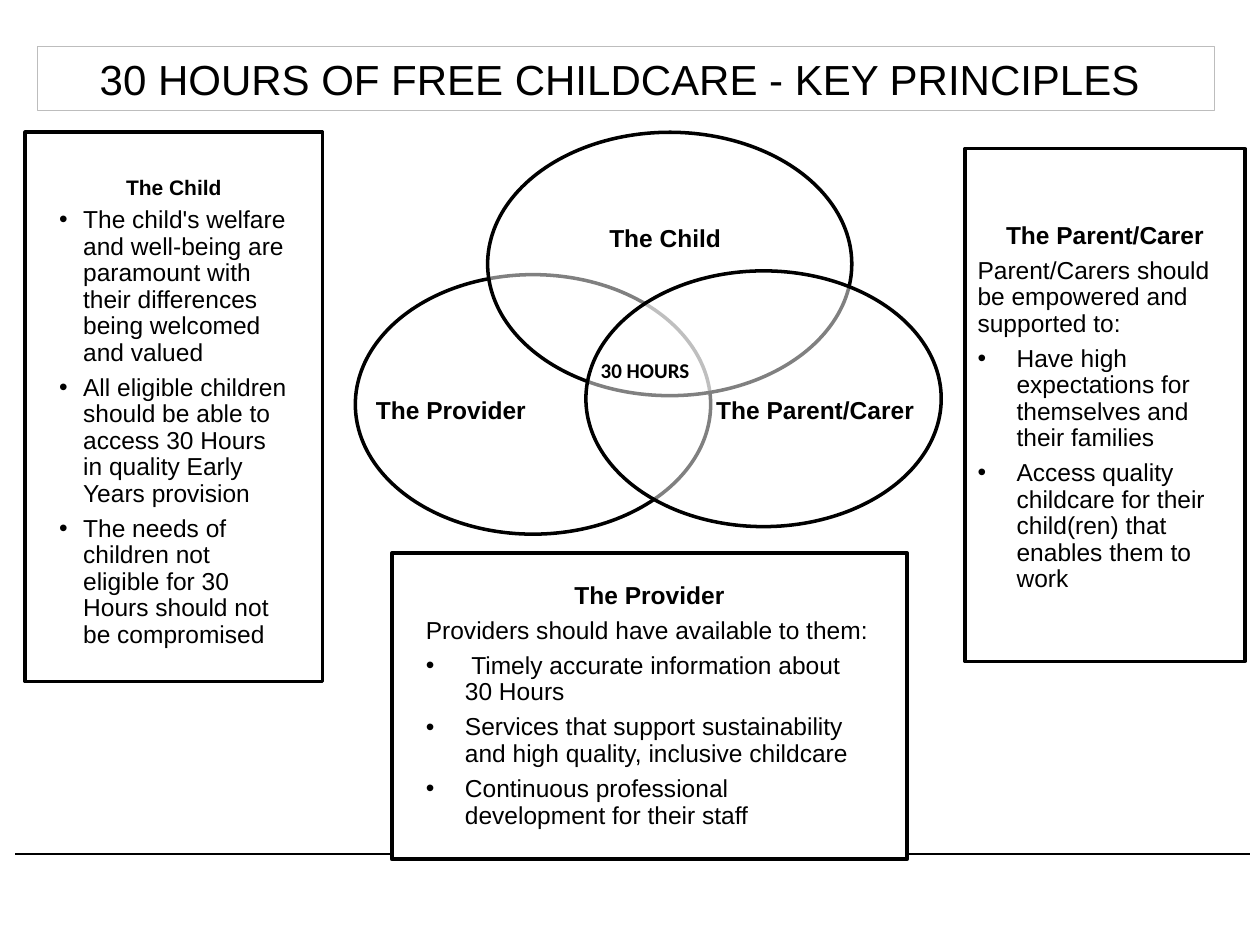
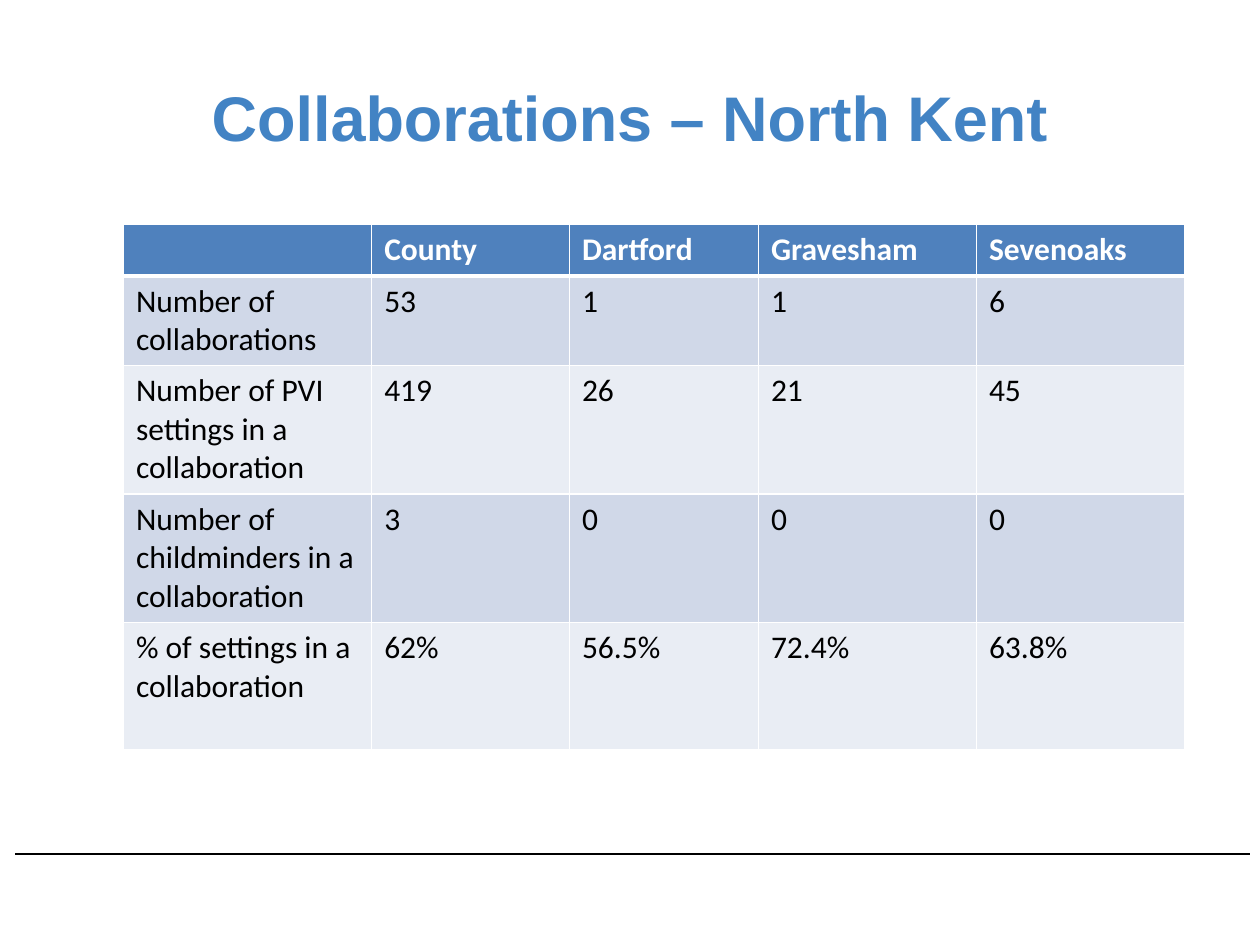
from dataclasses import dataclass

from lxml.etree import SubElement
from pptx import Presentation
from pptx.dml.color import RGBColor
from pptx.enum.shapes import MSO_CONNECTOR, MSO_SHAPE
from pptx.enum.text import MSO_ANCHOR, PP_ALIGN
from pptx.oxml.ns import qn
from pptx.util import Inches, Pt

GRID_COLUMNS, GRID_ROWS = 100, 75


@dataclass(frozen=True)
class Theme:
    ink: str = "000000"
    paper: str = "FFFFFF"
    frame: str = "BDBDBD"
    heading: str = "4283C4"
    header: str = "4F81BD"
    bands: tuple = ("D0D8E8", "E9EDF4")
    sans: str = "Arial"
    table_font: str = "Calibri"
    heading_size: int = 36
    banner_size: int = 24
    table_size: int = 18
    body_size: int = 14
    small_size: int = 12
    outline: float = 2
    line_spacing: float = 0.9
    gap_share: float = 0.35


class Deck:
    """Holds the theme and the current slide; areas are left, top, columns, rows."""

    def __init__(self, theme):
        self.theme = theme
        self.presentation = Presentation()
        self.presentation.slide_width = Inches(10)
        self.presentation.slide_height = Inches(7.5)
        self.column = self.presentation.slide_width / GRID_COLUMNS
        self.row = self.presentation.slide_height / GRID_ROWS

    def place(self, left, top, columns, rows):
        return (round(left * self.column), round(top * self.row),
                round(columns * self.column), round(rows * self.row))

    def new_slide(self):
        layout = self.presentation.slide_layouts[6]
        self.slide = self.presentation.slides.add_slide(layout)
        self.footer_rule()

    def footer_rule(self):
        start_x, y, end_x, _ = self.place(1.2, 67.8, 99.2, 0)
        rule = self.slide.shapes.add_connector(
            MSO_CONNECTOR.STRAIGHT, start_x, y, end_x, y)
        rule.line.color.rgb = RGBColor.from_string(self.theme.ink)
        rule.line.width = Pt(1)
        SubElement(rule.element.spPr, qn("a:effectLst"))

    def outlined(self, preset, area, color, width, opacity=100):
        shape = self.slide.shapes.add_shape(preset, *self.place(*area))
        shape.shadow.inherit = False
        shape.fill.solid()
        shape.fill.fore_color.rgb = RGBColor.from_string(self.theme.paper)
        if opacity < 100:
            fill_color = shape.element.spPr.find(qn("a:solidFill"))[0]
            SubElement(fill_color, qn("a:alpha"), val=str(opacity * 1000))
        shape.line.color.rgb = RGBColor.from_string(color)
        shape.line.width = Pt(width)
        return shape

    def set_frame(self, frame, anchor, insets=(0, 0, 0, 0)):
        """Wrap and anchor a text frame; insets are in columns and rows."""
        frame.word_wrap = True
        frame.vertical_anchor = anchor
        (frame.margin_left, frame.margin_top,
         frame.margin_right, frame.margin_bottom) = self.place(*insets)

    def style(self, paragraph, size, bold=False, color=None, font=None,
              align=PP_ALIGN.LEFT):
        paragraph.alignment = align
        for run in paragraph.runs:
            run.font.size = Pt(size)
            run.font.bold = bold
            run.font.name = font or self.theme.sans
            run.font.color.rgb = RGBColor.from_string(color or self.theme.ink)

    def bullet(self, paragraph, indent):
        hang = round(indent * self.column)
        properties = paragraph._p.get_or_add_pPr()
        properties.set("marL", str(hang))
        properties.set("indent", str(-hang))
        SubElement(properties, qn("a:buFont"), typeface=self.theme.sans)
        SubElement(properties, qn("a:buChar"), char="•")

    def banner(self, text, area):
        banner = self.outlined(MSO_SHAPE.RECTANGLE, area, self.theme.frame, 0.75)
        self.set_frame(banner.text_frame, MSO_ANCHOR.MIDDLE, (1, 0.5, 2, 0.5))
        banner.text_frame.text = text
        self.style(banner.text_frame.paragraphs[0], self.theme.banner_size,
                   align=PP_ALIGN.CENTER)

    def principles(self, area, heading, points, intro=None, heading_size=None,
                   indent=3.1, anchor=MSO_ANCHOR.TOP, insets=(2.7,) * 4):
        """Framed panel: bold heading, optional lead-in and bullet points."""
        theme = self.theme
        panel = self.outlined(MSO_SHAPE.RECTANGLE, area, theme.ink, theme.outline)
        frame = panel.text_frame
        self.set_frame(frame, anchor, insets)
        lead = [heading, intro] if intro else [heading]
        frame.text = "\n".join(lead + points)
        for index, paragraph in enumerate(frame.paragraphs):
            is_heading = index == 0
            size = heading_size if is_heading and heading_size else theme.body_size
            if index >= len(lead):
                self.bullet(paragraph, indent)
            paragraph.line_spacing = theme.line_spacing
            paragraph.space_after = Pt(round(size * theme.gap_share, 1))
            self.style(paragraph, size, bold=is_heading,
                       align=PP_ALIGN.CENTER if is_heading else PP_ALIGN.LEFT)

    def circle(self, area):
        self.outlined(MSO_SHAPE.OVAL, area, self.theme.ink,
                      self.theme.outline, opacity=50)

    def label(self, text, center, size, columns=20, rows=4, color=None, font=None):
        """Bold text centred on a point of the grid."""
        x, y = center
        box = self.slide.shapes.add_textbox(
            *self.place(x - columns / 2, y - rows / 2, columns, rows))
        self.set_frame(box.text_frame, MSO_ANCHOR.MIDDLE)
        box.text_frame.text = text
        self.style(box.text_frame.paragraphs[0], size, True, color, font,
                   PP_ALIGN.CENTER)

    def borders(self, cell, top, bottom):
        widths = {"a:lnL": 1, "a:lnR": 1, "a:lnT": top, "a:lnB": bottom}
        properties = cell._tc.get_or_add_tcPr()
        for side, width in widths.items():
            line = SubElement(properties, qn(side), w=str(Pt(width)))
            fill = SubElement(line, qn("a:solidFill"))
            SubElement(fill, qn("a:srgbClr"), val=self.theme.paper)

    def table(self, left, top, columns, rows, records):
        """Banded table; columns and rows list the widths and heights."""
        theme = self.theme
        area = self.place(left, top, sum(columns), sum(rows))
        table = self.slide.shapes.add_table(len(rows), len(columns), *area).table
        for column, width in zip(table.columns, columns):
            column.width = round(width * self.column)
        for row, height in zip(table.rows, rows):
            row.height = round(height * self.row)
        for r, record in enumerate(records):
            is_header = r == 0
            for c, value in enumerate(record):
                cell = table.cell(r, c)
                cell.text = value
                self.borders(cell, top=3 if r == 1 else 1,
                             bottom=3 if is_header else 1)
                cell.fill.solid()
                cell.fill.fore_color.rgb = RGBColor.from_string(
                    theme.header if is_header else theme.bands[(r - 1) % 2])
                self.style(cell.text_frame.paragraphs[0], theme.table_size,
                           is_header, theme.paper if is_header else theme.ink,
                           theme.table_font)


def key_principles(deck):
    theme = deck.theme
    deck.new_slide()
    deck.banner("30 HOURS OF FREE CHILDCARE - KEY PRINCIPLES", (3, 3.7, 93.4, 5.1))
    deck.principles(
        (2, 10.5, 23.6, 43.6), "The Child",
        ["The child's welfare and well-being are paramount with their "
         "differences being welcomed and valued",
         "All eligible children should be able to access 30 Hours in quality "
         "Early Years provision",
         "The needs of children not eligible for 30 Hours should not be "
         "compromised"],
        heading_size=theme.small_size, indent=1.9, insets=(2.7, 3.6, 2.7, 2.7))
    deck.principles(
        (76.6, 11.8, 22.2, 40.7), "The Parent/Carer",
        ["Have high expectations for themselves and their families",
         "Access quality childcare for their child(ren) that enables them to work"],
        intro="Parent/Carers should be empowered and supported to:",
        insets=(1, 5.9, 1, 1))
    deck.principles(
        (31.1, 43.9, 40.9, 24.3), "The Provider",
        [" Timely accurate information about 30 Hours",
         "Services that support sustainability and high quality, inclusive childcare",
         "Continuous professional development for their staff"],
        intro="Providers should have available to them:",
        anchor=MSO_ANCHOR.MIDDLE)

    circles = [
        ("The Provider", (28.2, 21.8, 28.2, 20.6), (35.8, 32.5)),
        ("The Child", (38.7, 10.5, 28.9, 20.9), (52.8, 18.9)),
        ("The Parent/Carer", (46.5, 21.5, 28.2, 20.3), (64.7, 32.5)),
    ]
    for _, area, _ in circles:
        deck.circle(area)
    for name, _, center in circles:
        deck.label(name, center, theme.body_size)
    deck.label("30 HOURS", (51.2, 29.4), theme.small_size, columns=9.5,
               rows=2.3, font=theme.table_font)


def collaborations(deck):
    deck.new_slide()
    deck.label("Collaborations – North Kent", (50, 9.25), deck.theme.heading_size,
               columns=90, rows=12.5, color=deck.theme.heading)
    deck.table(
        9.8, 17.8, [19.7, 15.7, 15, 17.3, 16.5], [4.1, 7.1, 10.2, 10.2, 10.1],
        [("", "County", "Dartford", "Gravesham", "Sevenoaks"),
         ("Number of collaborations", "53", "1", "1", "6"),
         ("Number of PVI settings in a collaboration", "419", "26", "21", "45"),
         ("Number of childminders in a collaboration", "3", "0", "0", "0"),
         ("% of settings in a collaboration", "62%", "56.5%", "72.4%", "63.8%")])


def main():
    deck = Deck(Theme())
    key_principles(deck)
    collaborations(deck)
    deck.presentation.save("out.pptx")


if __name__ == "__main__":
    main()
